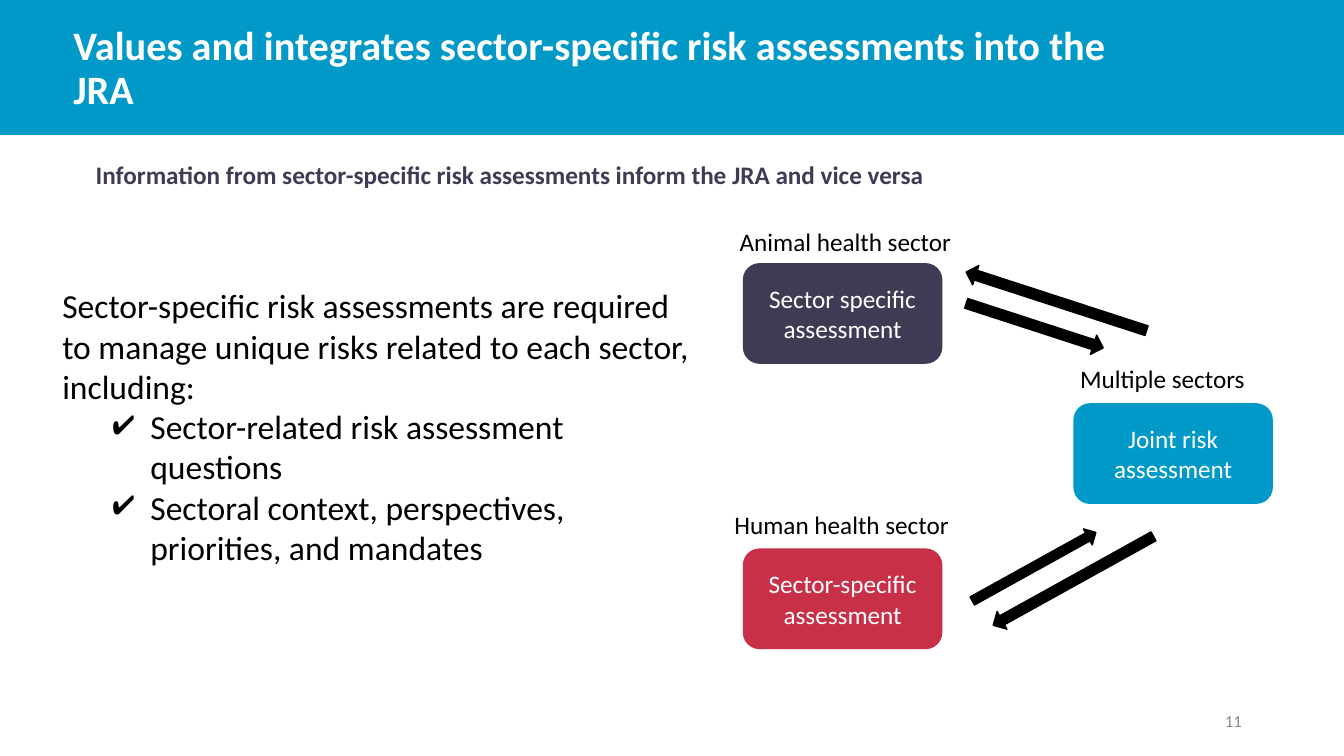
from lxml import etree
from pptx import Presentation
from pptx.dml.color import RGBColor
from pptx.enum.shapes import MSO_SHAPE
from pptx.enum.text import MSO_ANCHOR, PP_ALIGN
from pptx.oxml.ns import qn
from pptx.util import Cm, Pt

RECTANGLE = MSO_SHAPE.RECTANGLE
ROUNDED = MSO_SHAPE.ROUNDED_RECTANGLE
LEFT_ARROW = MSO_SHAPE.LEFT_ARROW
RIGHT_ARROW = MSO_SHAPE.RIGHT_ARROW
TOP = MSO_ANCHOR.TOP
MIDDLE = MSO_ANCHOR.MIDDLE
LEFT = PP_ALIGN.LEFT
CENTER = PP_ALIGN.CENTER
RIGHT = PP_ALIGN.RIGHT

BLUE, PURPLE, RED = "0099C8", "3E3C55", "C83048"
BLACK, WHITE, GRAY = "000000", "FFFFFF", "888888"

# Name, label left and top, box left and top, box text, box colour
SECTORS = [
    ("Animal health sector", 18.39, 5.59, 18.72, 6.63, "Sector specific assessment", PURPLE),
    ("Multiple sectors", 26.97, 9.02, 27.05, 10.16, "Joint risk assessment", BLUE),
    ("Human health sector", 18.26, 12.7, 18.72, 13.82, "Sector-specific assessment", RED),
]

# Kind, left, top, width, height, rotation
ARROWS = [
    (RIGHT_ARROW, 24.26, 7.95, 3.63, 0.51, 18),
    (LEFT_ARROW, 24.23, 7.34, 4.78, 0.51, 18),
    (RIGHT_ARROW, 24.28, 14.05, 3.56, 0.46, 331),
    (LEFT_ARROW, 24.74, 14.38, 4.62, 0.51, 331),
]


def rgb(value):
    return RGBColor.from_string(value)


class SlideBuilder:
    font_name = "Calibri"

    def __init__(self, slide):
        self.slide = slide

    def style(self, paragraph, size, color, bold=False, align=LEFT):
        paragraph.alignment = align
        font = paragraph.font
        font.name = self.font_name
        font.size = Pt(size)
        font.bold = bold
        font.color.rgb = rgb(color)

    def shape(self, kind, left, top, width, height, color):
        shape = self.slide.shapes.add_shape(kind, Cm(left), Cm(top), Cm(width), Cm(height))
        shape.shadow.inherit = False
        shape.fill.solid()
        shape.fill.fore_color.rgb = rgb(color)
        shape.line.fill.background()
        return shape

    def text(self, text, left, top, width, height, size, color,
             bold=False, align=LEFT, anchor=TOP):
        box = self.slide.shapes.add_textbox(Cm(left), Cm(top), Cm(width), Cm(height))
        frame = box.text_frame
        frame.word_wrap = True
        frame.vertical_anchor = anchor
        frame.text = text
        self.style(frame.paragraphs[0], size, color, bold, align)
        return frame

    def check_item(self, frame, text, size, color):
        """Add a second-level paragraph with a check mark as its bullet."""
        paragraph = frame.add_paragraph()
        paragraph.text = text
        paragraph.level = 1
        self.style(paragraph, size, color)
        properties = paragraph._p.get_or_add_pPr()
        properties.set("marL", str(Cm(2.22)))
        properties.set("indent", str(Cm(-0.95)))
        bullet = etree.Element(qn("a:buChar"), char="✔")
        properties.insert(0, bullet)

    def assessment(self, text, left, top, color):
        box = self.shape(ROUNDED, left, top, 5.03, 2.54, color)
        frame = box.text_frame
        frame.word_wrap = True
        frame.vertical_anchor = MIDDLE
        frame.text = text
        self.style(frame.paragraphs[0], 18, WHITE, align=CENTER)

    def arrow(self, kind, left, top, width, height, rotation):
        arrow = self.shape(kind, left, top, width, height, BLACK)
        arrow.line.color.rgb = rgb(BLACK)
        arrow.line.width = Pt(1)
        arrow.rotation = rotation


def main():
    presentation = Presentation()
    presentation.slide_width = Cm(33.87)
    presentation.slide_height = Cm(19.05)
    builder = SlideBuilder(presentation.slides.add_slide(presentation.slide_layouts[6]))

    builder.shape(RECTANGLE, 0, 0, 33.87, 3.4, BLUE)
    title = builder.text("Values and integrates sector-specific risk assessments into the JRA",
                         1.6, 0.74, 27.84, 2.03, 28.8, WHITE, bold=True, anchor=MIDDLE)
    title.paragraphs[0].line_spacing = 0.9
    builder.text("11", 23.93, 17.65, 7.62, 1.02, 12, GRAY, align=RIGHT, anchor=MIDDLE)
    builder.text("Information from sector-specific risk assessments inform the JRA and vice versa",
                 2.16, 3.89, 27.08, 1.07, 18, PURPLE, bold=True)

    body = builder.text("Sector-specific risk assessments are required to manage unique risks "
                        "related to each sector, including:",
                        1.32, 7.06, 16.59, 7.44, 24, BLACK)
    for item in ("Sector-related risk assessment questions",
                 "Sectoral context, perspectives, priorities, and mandates"):
        builder.check_item(body, item, 24, BLACK)

    for name, label_left, label_top, box_left, box_top, text, color in SECTORS:
        builder.assessment(text, box_left, box_top, color)
        builder.text(name, label_left, label_top, 7.62, 1.02, 18, BLACK)
    for arrow in ARROWS:
        builder.arrow(*arrow)

    presentation.save("out.pptx")


if __name__ == "__main__":
    main()
